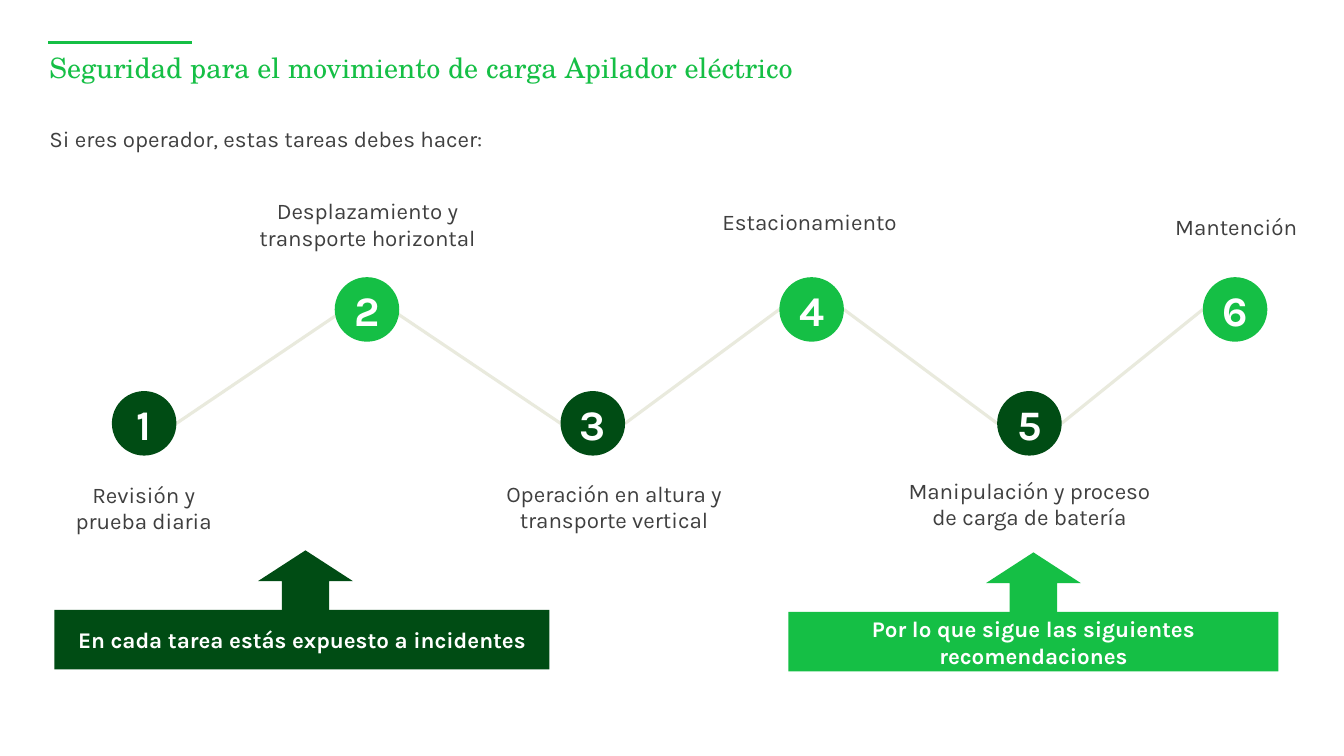
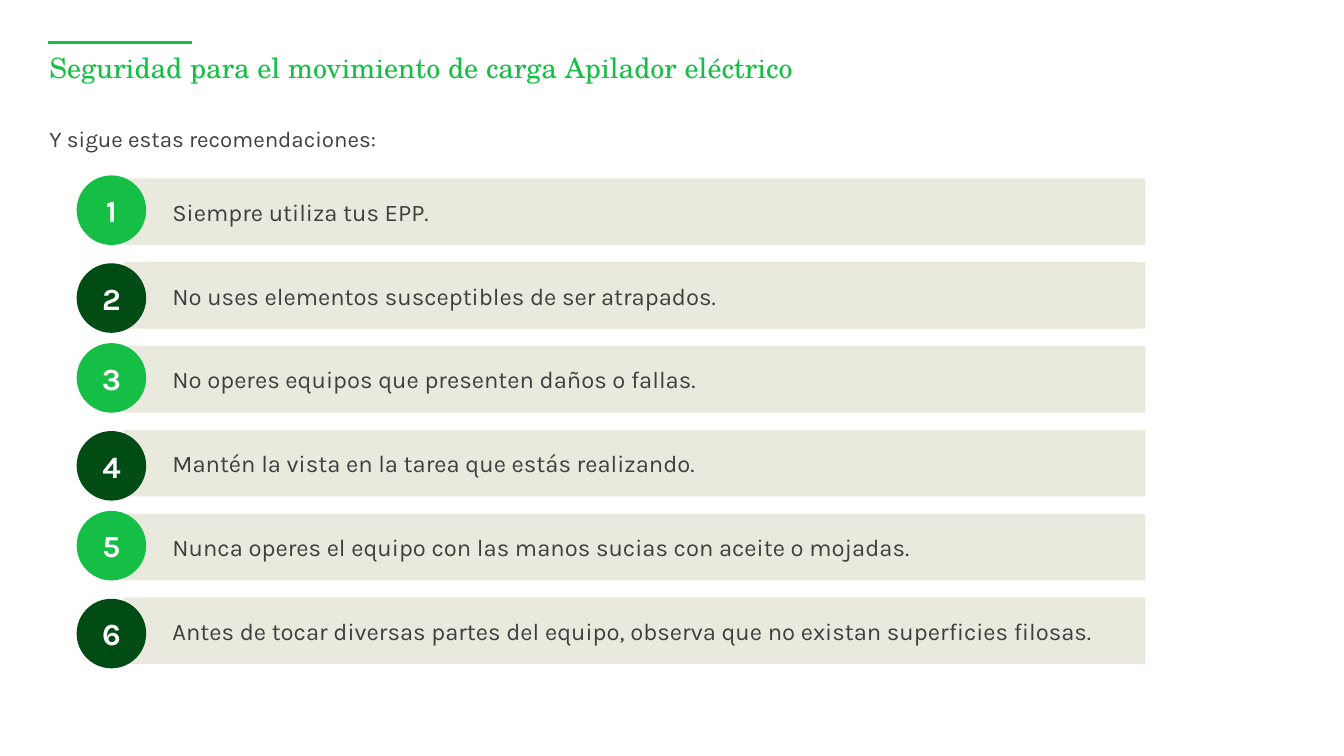
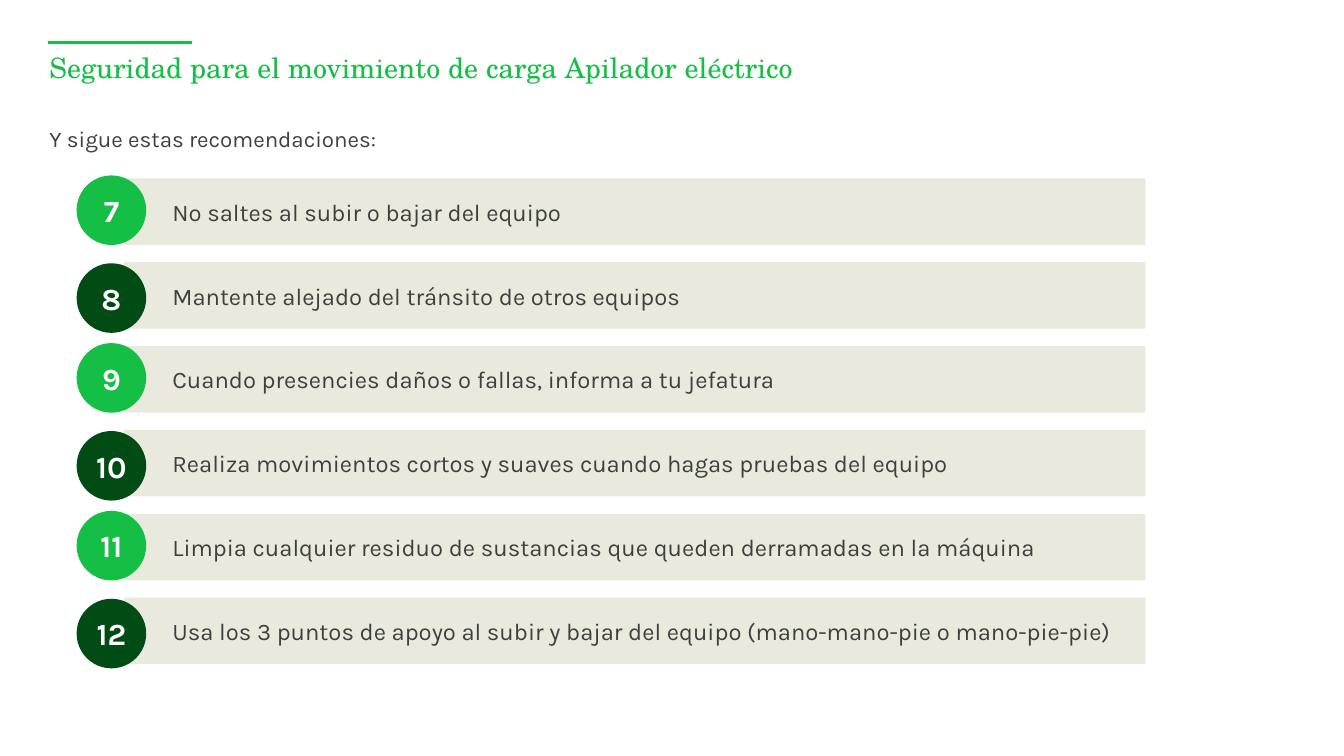
from lxml import etree
from pptx import Presentation
from pptx.dml.color import RGBColor
from pptx.enum.shapes import MSO_CONNECTOR, MSO_SHAPE
from pptx.enum.text import MSO_ANCHOR, PP_ALIGN
from pptx.oxml.ns import qn
from pptx.util import Inches, Pt

OVAL, RECT, ARROW = MSO_SHAPE.OVAL, MSO_SHAPE.RECTANGLE, MSO_SHAPE.UP_ARROW
LEFT, CENTER = PP_ALIGN.LEFT, PP_ALIGN.CENTER
TOP, MIDDLE = MSO_ANCHOR.TOP, MSO_ANCHOR.MIDDLE
STRAIGHT = MSO_CONNECTOR.STRAIGHT


class Theme:
    green = RGBColor.from_string("15BF45")
    dark = RGBColor.from_string("004C14")
    sand = RGBColor.from_string("E9EADD")
    ink = RGBColor.from_string("3F3F3F")
    intro_ink = RGBColor.from_string("404040")
    white = RGBColor.from_string("FFFFFF")
    title_font = "TeX Gyre Schola"
    body_font = "Karla"
    title_size = 20
    body_size = 16
    item_size = 17
    badge_size = 22
    step_size = 30


def add_text(s, text, box, kind=None, fill=None, size=Theme.body_size, color=Theme.ink,
             font=Theme.body_font, bold=False, align=LEFT, anchor=TOP, spacing=None,
             margins=(0.1, 0.05, 0.1, 0.05), wrap=True):
    box = [Inches(v) for v in box]
    if kind is None:
        sp = s.shapes.add_textbox(*box)
    else:
        sp = s.shapes.add_shape(kind, *box)
        sp.shadow.inherit = False
        sp.fill.solid()
        sp.fill.fore_color.rgb = fill
        sp.line.fill.background()
    if not text:
        return
    tf = sp.text_frame
    tf.word_wrap = wrap
    tf.vertical_anchor = anchor
    tf.margin_left, tf.margin_top, tf.margin_right, tf.margin_bottom = [Inches(m) for m in margins]
    p = tf.paragraphs[0]
    p.alignment = align
    if spacing:
        p.line_spacing = spacing
    r = p.add_run()
    r.text = text
    r.font.name, r.font.size, r.font.bold = font, Pt(size), bold
    r.font.color.rgb = color


def add_line(s, x1, y1, x2, y2, color, width):
    line = s.shapes.add_connector(STRAIGHT, Inches(x1), Inches(y1), Inches(x2), Inches(y2))
    line.line.color.rgb = color
    line.line.width = Pt(width)
    etree.SubElement(line._element.spPr, qn("a:effectLst"))


prs = Presentation()
prs.slide_width, prs.slide_height = Inches(13.33), Inches(7.5)

NO_MARGINS = (0, 0, 0, 0)
TITLE = "Seguridad para el movimiento de carga Apilador eléctrico"
INTROS = [
    "Si eres operador, estas tareas debes hacer:",
    "Y sigue estas recomendaciones:",
    "Y sigue estas recomendaciones:",
]
slides = []
for intro in INTROS:
    s = prs.slides.add_slide(prs.slide_layouts[6])
    add_line(s, 0.48, 0.42, 1.9, 0.42, Theme.green, 1.75)
    add_text(s, TITLE, (0.49, 0.54, 10.79, 0.57), size=Theme.title_size, color=Theme.green,
             font=Theme.title_font, spacing=0.9, margins=NO_MARGINS)
    add_text(s, intro, (0.49, 1.27, 10.79, 0.39), color=Theme.intro_ink,
             spacing=0.9, margins=NO_MARGINS)
    slides.append(s)

s = slides[0]
LINKS = [(1.75, 3.51, 3.01), (5.56, 3.85, 3.05), (6.2, 7.73, 3.07),
         (9.89, 8.37, 3.07), (10.53, 11.93, 3.07)]
for low_x, high_x, high_y in LINKS:
    add_line(s, low_x, 4.2, high_x, high_y, Theme.sand, 2.25)

STEPS = [
    (1.11, "Revisión y prueba diaria", (0.48, 4.72, 1.89, 0.64)),
    (3.32, "Desplazamiento y transporte horizontal", (2.31, 1.91, 2.67, 0.64)),
    (5.56, "Operación en altura y transporte vertical", (4.85, 4.71, 2.48, 0.64)),
    (7.73, "Estacionamiento", (7.01, 2.02, 2.04, 0.37)),
    (9.89, "Manipulación y proceso de carga de batería", (8.77, 4.68, 2.88, 0.64)),
    (11.93, "Mantención", (11.47, 2.07, 1.58, 0.37)),
]
for number, (x, label, label_box) in enumerate(STEPS, 1):
    y, fill = (3.88, Theme.dark) if number % 2 else (2.75, Theme.green)
    add_text(s, str(number), (x, y, 0.64, 0.64), kind=OVAL, fill=fill, size=Theme.step_size,
             color=Theme.white, bold=True, align=CENTER, anchor=MIDDLE,
             margins=NO_MARGINS, wrap=False)
    add_text(s, label, label_box, align=CENTER)

CALLOUTS = [
    ("En cada tarea estás expuesto a incidentes", 0.54, 6.05, 4.91, 2.56, Theme.dark),
    ("Por lo que sigue las siguientes recomendaciones", 7.82, 6.07, 4.86, 9.78, Theme.green),
]
for text, x, y, width, arrow_x, fill in CALLOUTS:
    add_text(s, text, (x, y, width, 0.59), kind=RECT, fill=fill, color=Theme.white,
             bold=True, align=CENTER, anchor=MIDDLE)
    add_text(s, "", (arrow_x, y - 0.59, 0.94, 0.61), kind=ARROW, fill=fill)

RECOMMENDATIONS = [
    "Siempre utiliza tus EPP.",
    "No uses elementos susceptibles de ser atrapados.",
    "No operes equipos que presenten daños o fallas.",
    "Mantén la vista en la tarea que estás realizando.",
    "Nunca operes el equipo con las manos sucias con aceite o mojadas.",
    "Antes de tocar diversas partes del equipo, observa que no existan superficies filosas.",
    "No saltes al subir o bajar del equipo",
    "Mantente alejado del tránsito de otros equipos",
    "Cuando presencies daños o fallas, informa a tu jefatura",
    "Realiza movimientos cortos y suaves cuando hagas pruebas del equipo",
    "Limpia cualquier residuo de sustancias que queden derramadas en la máquina",
    "Usa los 3 puntos de apoyo al subir y bajar del equipo (mano-mano-pie o mano-pie-pie)",
]
ROWS = 6
FIRST_Y, LAST_Y = 1.77, 5.93
PITCH = (LAST_Y - FIRST_Y) / (ROWS - 1)
for i, text in enumerate(RECOMMENDATIONS):
    s = slides[1 + i // ROWS]
    y = FIRST_Y + i % ROWS * PITCH
    fill, shift = (Theme.dark, 0.01) if i % 2 else (Theme.green, -0.03)
    add_text(s, text, (1.23, y, 10.13, 0.66), kind=RECT, fill=Theme.sand,
             size=Theme.item_size, anchor=MIDDLE, margins=(0.48, 0, 0, 0))
    add_text(s, str(i + 1), (0.76, y + shift, 0.69, 0.69), kind=OVAL, fill=fill,
             size=Theme.badge_size, color=Theme.white, bold=True, align=CENTER,
             anchor=MIDDLE, margins=NO_MARGINS, wrap=False)

prs.save("out.pptx")
